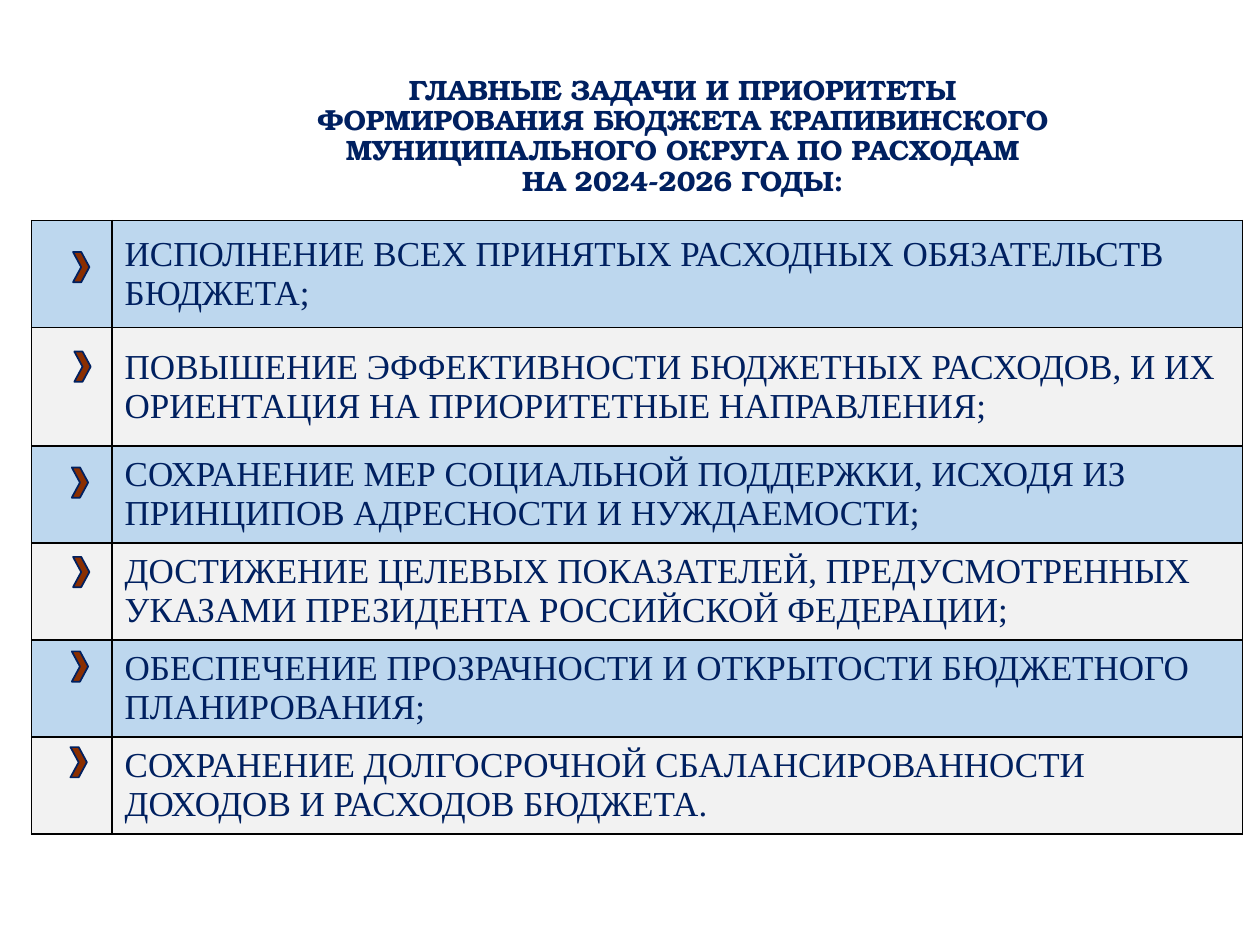
from lxml import etree
from pptx import Presentation
from pptx.dml.color import RGBColor
from pptx.enum.shapes import MSO_SHAPE as Shape
from pptx.enum.text import MSO_ANCHOR as Anchor, PP_ALIGN as Align
from pptx.oxml.ns import qn
from pptx.util import Inches, Pt

NAVY = RGBColor(0x00, 0x20, 0x60)
BLUE = RGBColor(0xBD, 0xD7, 0xEE)
GRAY = RGBColor(0xF2, 0xF2, 0xF2)
BROWN = RGBColor(0x8A, 0x2E, 0x00)
BORDER = RGBColor(0x00, 0x00, 0x00)

TITLE_LINES = [
    "ГЛАВНЫЕ ЗАДАЧИ И ПРИОРИТЕТЫ ФОРМИРОВАНИЯ БЮДЖЕТА КРАПИВИНСКОГО "
    "МУНИЦИПАЛЬНОГО ОКРУГА ПО РАСХОДАМ",
    "НА 2024-2026 ГОДЫ:",
]

# Task, row height, chevron left and top
TASKS = [
    ("ИСПОЛНЕНИЕ ВСЕХ ПРИНЯТЫХ РАСХОДНЫХ ОБЯЗАТЕЛЬСТВ БЮДЖЕТА;",
     0.85, 0.58, 2.0),
    ("ПОВЫШЕНИЕ ЭФФЕКТИВНОСТИ БЮДЖЕТНЫХ РАСХОДОВ, И ИХ ОРИЕНТАЦИЯ "
     "НА ПРИОРИТЕТНЫЕ НАПРАВЛЕНИЯ;", 0.94, 0.59, 2.79),
    ("СОХРАНЕНИЕ МЕР СОЦИАЛЬНОЙ ПОДДЕРЖКИ, ИСХОДЯ ИЗ ПРИНЦИПОВ "
     "АДРЕСНОСТИ И НУЖДАЕМОСТИ;", 0.77, 0.57, 3.71),
    ("ДОСТИЖЕНИЕ ЦЕЛЕВЫХ ПОКАЗАТЕЛЕЙ, ПРЕДУСМОТРЕННЫХ УКАЗАМИ "
     "ПРЕЗИДЕНТА РОССИЙСКОЙ ФЕДЕРАЦИИ;", 0.77, 0.58, 4.42),
    ("ОБЕСПЕЧЕНИЕ ПРОЗРАЧНОСТИ И ОТКРЫТОСТИ БЮДЖЕТНОГО ПЛАНИРОВАНИЯ;",
     0.77, 0.57, 5.17),
    ("СОХРАНЕНИЕ ДОЛГОСРОЧНОЙ СБАЛАНСИРОВАННОСТИ ДОХОДОВ И РАСХОДОВ "
     "БЮДЖЕТА.", 0.77, 0.56, 5.93),
]
COLUMN_WIDTHS = [0.64, 8.97]


def add_run(paragraph, text, font_name, size, bold=False):
    run = paragraph.add_run()
    run.text = text
    run.font.name = font_name
    run.font.size = Pt(size)
    run.font.bold = bold
    run.font.color.rgb = NAVY


def fill_title(title):
    title.left, title.top = Inches(2.17), Inches(0.48)
    title.width, title.height = Inches(6.5), Inches(1.21)
    frame = title.text_frame
    frame.word_wrap = True
    frame.vertical_anchor = Anchor.MIDDLE
    paragraph = frame.paragraphs[0]
    paragraph.alignment = Align.CENTER
    paragraph.line_spacing = 0.9
    for index, line in enumerate(TITLE_LINES):
        if index:
            paragraph.add_line_break()
        add_run(paragraph, line, "TeX Gyre Bonum", 16, bold=True)


def set_borders(cell):
    properties = cell._tc.get_or_add_tcPr()
    for side in ("a:lnL", "a:lnR", "a:lnT", "a:lnB"):
        line = etree.SubElement(properties, qn(side), w=str(Pt(1)))
        fill = etree.SubElement(line, qn("a:solidFill"))
        etree.SubElement(fill, qn("a:srgbClr"), val=str(BORDER))


def add_task_table(slide):
    heights = [height for _, height, _, _ in TASKS]
    table = slide.shapes.add_table(
        len(TASKS), len(COLUMN_WIDTHS), Inches(0.25), Inches(1.75),
        Inches(sum(COLUMN_WIDTHS)), Inches(sum(heights))).table
    for column, width in zip(table.columns, COLUMN_WIDTHS):
        column.width = Inches(width)
    for index, (text, height, _, _) in enumerate(TASKS):
        row = table.rows[index]
        row.height = Inches(height)
        for cell in row.cells:
            # Borders come before the fill in the cell properties
            set_borders(cell)
            cell.fill.solid()
            cell.fill.fore_color.rgb = GRAY if index % 2 else BLUE
            cell.vertical_anchor = Anchor.MIDDLE
        task_cell = row.cells[1]
        add_run(task_cell.text_frame.paragraphs[0], text,
                "Times New Roman", 20)


def add_chevron(slide, left, top):
    chevron = slide.shapes.add_shape(
        Shape.CHEVRON, Inches(left), Inches(top), Inches(0.13), Inches(0.24))
    chevron.shadow.inherit = False
    chevron.fill.solid()
    chevron.fill.fore_color.rgb = BROWN
    chevron.line.color.rgb = NAVY
    chevron.line.width = Pt(1)


def main():
    presentation = Presentation()
    presentation.slide_width = Inches(10)
    presentation.slide_height = Inches(7.5)
    title_only = presentation.slide_layouts[5]
    slide = presentation.slides.add_slide(title_only)

    # Heading
    fill_title(slide.shapes.title)

    # Tasks with their markers
    add_task_table(slide)
    for _, _, left, top in TASKS:
        add_chevron(slide, left, top)

    presentation.save("out.pptx")


if __name__ == "__main__":
    main()
